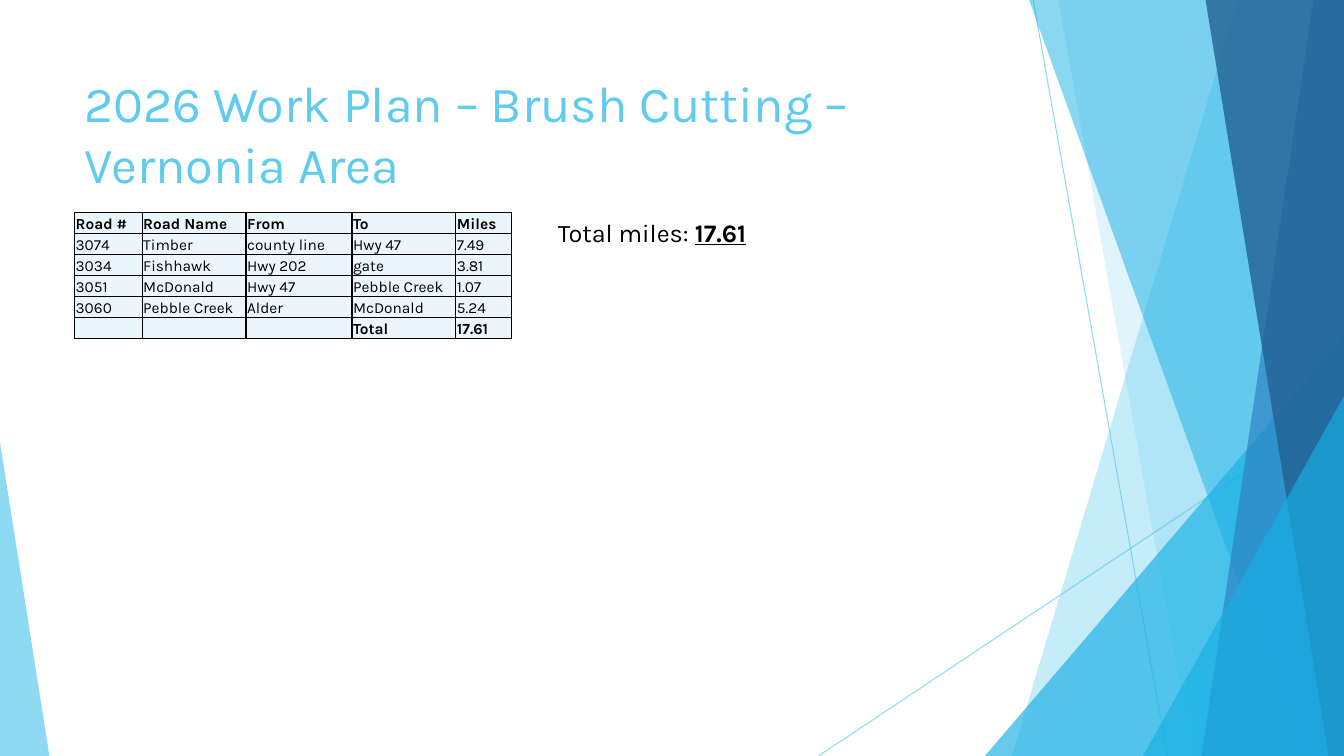
from dataclasses import dataclass

from lxml import etree
from pptx import Presentation
from pptx.dml.color import RGBColor
from pptx.enum.shapes import MSO_CONNECTOR, MSO_SHAPE
from pptx.enum.text import MSO_ANCHOR, MSO_AUTO_SIZE
from pptx.oxml.ns import qn
from pptx.util import Pt

STRAIGHT = MSO_CONNECTOR.STRAIGHT
TRIANGLE = MSO_SHAPE.ISOSCELES_TRIANGLE
TOP, BOTTOM = MSO_ANCHOR.TOP, MSO_ANCHOR.BOTTOM
NO_AUTOFIT, GROW = MSO_AUTO_SIZE.NONE, MSO_AUTO_SIZE.SHAPE_TO_FIT_TEXT


@dataclass(frozen=True)
class Theme:
    font: str = "Karla"
    title_size: int = 36
    body_size: int = 18
    table_size: int = 11
    sky: str = "5FCBEF"
    cyan: str = "17B0E4"
    blue: str = "2E83C3"
    navy: str = "226292"
    text: str = "000000"
    cell: str = "EAF6FC"


THEME = Theme()
SLIDE_BOX = (0, 0, 960, 540)

# Ribbons reach the right edge: top-left x, bottom-left x, colour, opacity
BACK_RIBBONS = [(884.2, 722.9, THEME.sky, 36), (756, 851.8, THEME.sky, 20)]
FRONT_RIBBONS = [(735.1, 929.5, THEME.cyan, 50), (938.2, 858.2, THEME.blue, 70),
                 (861.1, 949, THEME.navy, 80)]

ROADS = [
    ("Road #", "Road Name", "From", "To", "Miles"),
    ("3074", "Timber", "county line", "Hwy 47", "7.49"),
    ("3034", "Fishhawk", "Hwy 202", "gate", "3.81"),
    ("3051", "McDonald", "Hwy 47", "Pebble Creek", "1.07"),
    ("3060", "Pebble Creek", "Alder", "McDonald", "5.24"),
    ("", "", "", "Total", "17.61"),
]
COLUMN_SHARES = (67, 103, 105, 103, 55)


def set_opacity(color_parent, percent):
    color = next(color_parent.iter(qn("a:srgbClr")))
    etree.SubElement(color, qn("a:alpha"), val=str(percent * 1000))


def paint(shape, color, opacity):
    shape.shadow.inherit = False
    shape.fill.solid()
    shape.fill.fore_color.rgb = RGBColor.from_string(color)
    set_opacity(shape.fill._xPr, opacity)
    shape.line.fill.background()


def style(font, size, color, bold=False):
    font.name, font.size, font.bold = THEME.font, Pt(size), bold
    font.color.rgb = RGBColor.from_string(color)


def add_facets(slide, box):
    left, top, width, height = box
    right, bottom = left + width, top + height

    def hairline(x1, y1, x2, y2):
        line = slide.shapes.add_connector(
            STRAIGHT, Pt(left + x1), Pt(top + y1), Pt(left + x2), Pt(top + y2))
        line.line.width = Pt(0.75)
        line.line.color.rgb = RGBColor.from_string(THEME.sky)
        properties = line._element.spPr
        set_opacity(properties, 70)
        etree.SubElement(properties, qn("a:effectLst"))

    def ribbon(top_x, bottom_x, color, opacity):
        outline = slide.shapes.build_freeform(Pt(left + top_x), Pt(top), scale=1.0)
        outline.add_line_segments([
            (Pt(right), Pt(top)), (Pt(right), Pt(bottom)), (Pt(left + bottom_x), Pt(bottom))])
        paint(outline.convert_to_shape(), color, opacity)

    def corner(x, w, h, apex, color, opacity):
        triangle = slide.shapes.add_shape(TRIANGLE, Pt(x), Pt(bottom - h), Pt(w), Pt(h))
        triangle.adjustments[0] = apex
        paint(triangle, color, opacity)

    hairline(738, 0, 833.8, height)
    hairline(width, 290.2, 584.6, height)
    for facet in BACK_RIBBONS:
        ribbon(*facet)
    corner(right - 256.5, 256.5, 300, 1, THEME.cyan, 66)
    for facet in FRONT_RIBBONS:
        ribbon(*facet)
    corner(right - 143.5, 143.5, 257, 1, THEME.cyan, 66)
    corner(left, 35.3, 224, 0, THEME.sky, 70)


def add_text_frame(slide, box, autosize):
    frame = slide.shapes.add_textbox(*map(Pt, box)).text_frame
    frame.word_wrap = True
    frame.auto_size = autosize
    frame.vertical_anchor = TOP
    return frame


def add_title(slide, box):
    title = add_text_frame(slide, box, NO_AUTOFIT).paragraphs[0]
    title.text = "2026 Work Plan – Brush Cutting –\vVernonia Area"
    style(title.font, THEME.title_size, THEME.sky)


def add_total(slide, box):
    total = add_text_frame(slide, box, GROW).paragraphs[0]
    style(total.font, THEME.body_size, THEME.text)
    total.add_run().text = "Total miles: "
    miles = total.add_run()
    miles.text = ROADS[-1][-1]
    miles.font.bold = miles.font.underline = True


def add_borders(cell):
    properties = cell._tc.get_or_add_tcPr()
    for index, side in enumerate(("lnL", "lnR", "lnT", "lnB")):
        border = etree.Element(qn(f"a:{side}"), w=str(Pt(1)))
        fill = etree.SubElement(border, qn("a:solidFill"))
        etree.SubElement(fill, qn("a:srgbClr"), val=THEME.text)
        properties.insert(index, border)


def fill_cell(cell, text, bold):
    cell.margin_left = cell.margin_right = cell.margin_top = Pt(0.75)
    cell.margin_bottom = 0
    cell.vertical_anchor = BOTTOM
    cell.fill.solid()
    cell.fill.fore_color.rgb = RGBColor.from_string(THEME.cell)
    add_borders(cell)
    paragraph = cell.text_frame.paragraphs[0]
    style(paragraph.font, THEME.table_size, THEME.text, bold)
    if text:
        paragraph.text = text
    else:  # keeps an empty row from growing
        etree.SubElement(paragraph._p, qn("a:endParaRPr"), sz=str(THEME.table_size * 100))


def add_road_table(slide, box):
    table = slide.shapes.add_table(len(ROADS), len(COLUMN_SHARES), *map(Pt, box)).table
    table.first_row = table.horz_banding = False
    for column, share in zip(table.columns, COLUMN_SHARES):
        column.width = Pt(round(box[2] * share / sum(COLUMN_SHARES), 2))
    for r, road in enumerate(ROADS):
        table.rows[r].height = Pt(box[3] / len(ROADS))
        for c, text in enumerate(road):
            fill_cell(table.cell(r, c), text, bold=r in (0, len(ROADS) - 1))


def main():
    presentation = Presentation()
    presentation.slide_width, presentation.slide_height = map(Pt, SLIDE_BOX[2:])
    slide = presentation.slides.add_slide(presentation.slide_layouts[6])
    add_facets(slide, SLIDE_BOX)
    add_title(slide, (53.3, 48, 677, 104))
    add_road_table(slide, (53.3, 152, 312, 90))
    add_total(slide, (391.5, 152, 165.5, 29))
    presentation.save("out.pptx")


if __name__ == "__main__":
    main()
